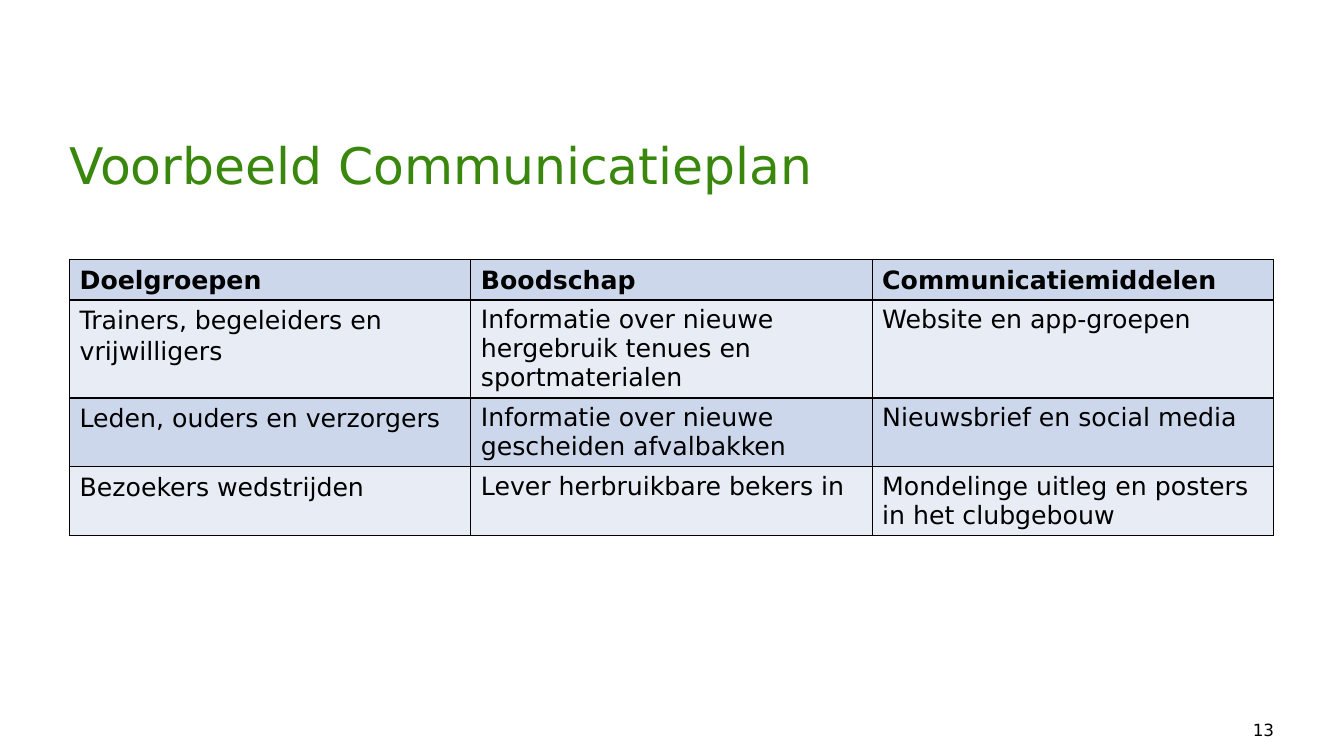
import dataclasses

import pptx
import pptx.dml.color
import pptx.enum.text
import pptx.oxml.ns
import pptx.util
from lxml import etree

Pt = pptx.util.Pt
Color = pptx.dml.color.RGBColor.from_string
Align = pptx.enum.text.PP_ALIGN
Anchor = pptx.enum.text.MSO_ANCHOR


@dataclasses.dataclass(frozen=True)
class Theme:
    font: str = "DejaVu Sans"
    ink: str = "000000"
    heading: str = "39870C"
    dark_band: str = "CCD7EB"
    light_band: str = "E7ECF5"
    title_size: int = 36
    table_size: int = 18
    number_size: int = 12
    border_width: int = 1


def apply(target, values):
    for name, value in values.items():
        setattr(target, name, value)


class SlideBuilder:
    def __init__(self, page, theme):
        self.page = page
        self.theme = theme

    def fill_text(self, frame, text, size, color, bold=False, **para_format):
        para = frame.paragraphs[0]
        apply(para, para_format)
        span = para.add_run()
        span.text = text
        apply(span.font, {"name": self.theme.font, "size": Pt(size), "bold": bold})
        span.font.color.rgb = Color(color)

    def text_box(self, bounds, text, size, color, anchor=Anchor.TOP, **para_format):
        box = self.page.shapes.add_textbox(*map(Pt, bounds))
        apply(box.text_frame, {
            "word_wrap": True,
            "vertical_anchor": anchor,
            "margin_left": 0,
            "margin_right": 0,
            "margin_top": 0,
            "margin_bottom": 0,
        })
        self.fill_text(box.text_frame, text, size, color, **para_format)

    def border(self, cell):
        qn = pptx.oxml.ns.qn
        properties = cell._tc.get_or_add_tcPr()
        for position, side in enumerate(("lnL", "lnR", "lnT", "lnB")):
            line = etree.Element(qn(f"a:{side}"), w=str(Pt(self.theme.border_width)))
            fill = etree.SubElement(line, qn("a:solidFill"))
            etree.SubElement(fill, qn("a:srgbClr"), val=self.theme.ink)
            properties.insert(position, line)

    def table(self, left, top, width, heights, rows, line_pitch):
        theme = self.theme
        columns = len(rows[0])
        bounds = map(Pt, (left, top, width, sum(heights)))
        table = self.page.shapes.add_table(len(rows), columns, *bounds).table
        for column in table.columns:
            column.width = Pt(width / columns)
        for r, (height, texts) in enumerate(zip(heights, rows)):
            table.rows[r].height = Pt(height)
            for c, text in enumerate(texts):
                cell = table.cell(r, c)
                cell.fill.solid()
                cell.fill.fore_color.rgb = Color(theme.light_band if r % 2 else theme.dark_band)
                self.border(cell)
                spacing = {"line_spacing": Pt(line_pitch)} if r == 0 or c == 0 else {}
                self.fill_text(cell.text_frame, text, theme.table_size, theme.ink, bold=r == 0, **spacing)


def main():
    deck = pptx.Presentation()
    apply(deck, {"slide_width": Pt(960), "slide_height": Pt(540)})
    theme = Theme()
    slide = SlideBuilder(deck.slides.add_slide(deck.slide_layouts[6]), theme)
    plan = [
        ("Doelgroepen", "Boodschap", "Communicatiemiddelen"),
        ("Trainers, begeleiders en vrijwilligers",
         "Informatie over nieuwe hergebruik tenues en sportmaterialen",
         "Website en app-groepen"),
        ("Leden, ouders en verzorgers",
         "Informatie over nieuwe gescheiden afvalbakken",
         "Nieuwsbrief en social media"),
        ("Bezoekers wedstrijden",
         "Lever herbruikbare bekers in",
         "Mondelinge uitleg en posters in het clubgebouw"),
    ]
    slide.table(49.7, 185.3, 860, (28.6, 70, 49, 49), plan, line_pitch=21.8)
    slide.text_box((869.8, 514, 40.3, 14.4), "13", theme.number_size, theme.ink,
                   anchor=Anchor.BOTTOM, alignment=Align.RIGHT)
    slide.text_box((49.7, 100.8, 861, 84.2), "Voorbeeld Communicatieplan",
                   theme.title_size, theme.heading, line_spacing=0.9)
    deck.save("out.pptx")


if __name__ == "__main__":
    main()
